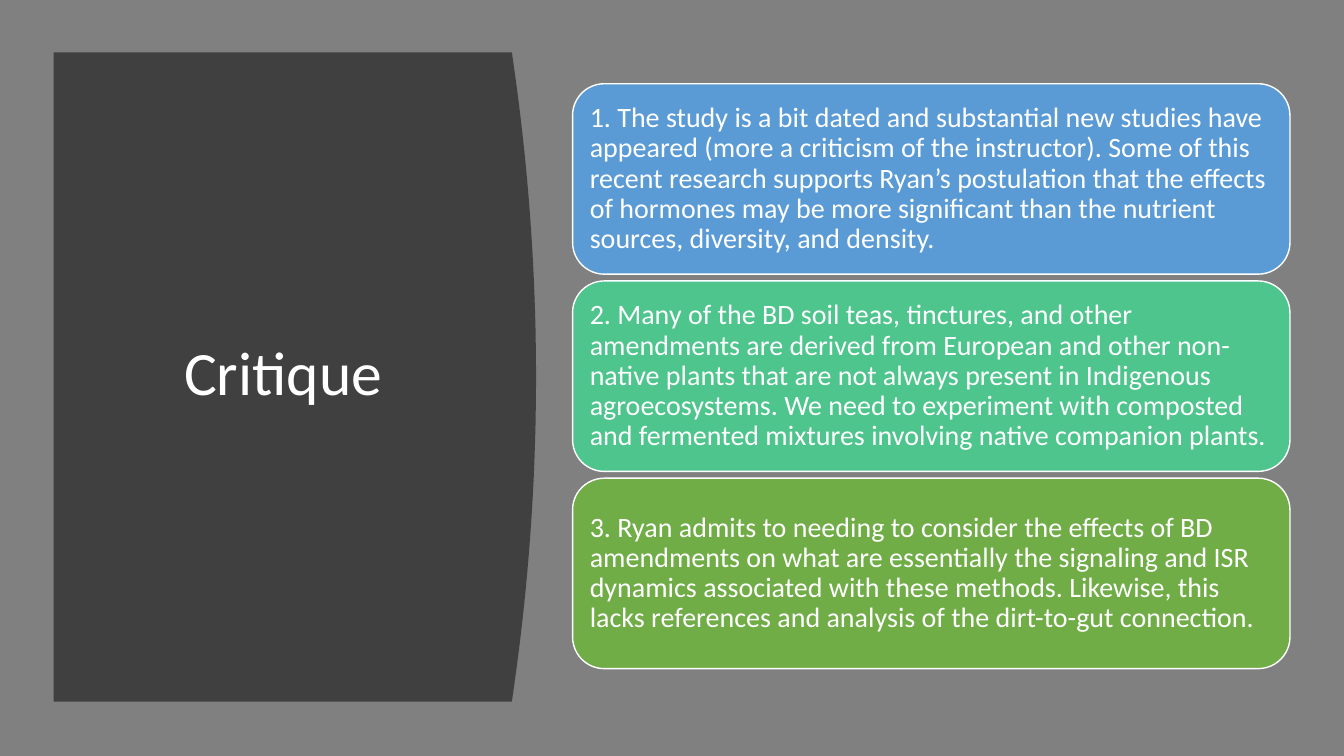
from pptx import Presentation
from pptx import util as u
from pptx.dml.color import RGBColor
from pptx.enum import shapes, text

CRITIQUES = [
    ("5B9BD5", "1. The study is a bit dated and substantial new studies have appeared "
     "(more a criticism of the instructor). Some of this recent research supports "
     "Ryan’s postulation that the effects of hormones may be more significant than "
     "the nutrient sources, diversity, and density."),
    ("4DC58D", "2. Many of the BD soil teas, tinctures, and other amendments are derived "
     "from European and other non-native plants that are not always present in "
     "Indigenous agroecosystems. We need to experiment with composted and fermented "
     "mixtures involving native companion plants."),
    ("70AD47", "3. Ryan admits to needing to consider the effects of BD amendments on what "
     "are essentially the signaling and ISR dynamics associated with these methods. "
     "Likewise, this lacks references and analysis of the dirt-to-gut connection."),
]


def paint(fill, color):
    """Make a fill solid in a hex colour."""
    fill.solid()
    fill.fore_color.rgb = RGBColor.from_string(color)


def write(frame, wording, size, align):
    """Put one white, vertically centred paragraph in a text frame."""
    frame.word_wrap = True
    frame.vertical_anchor = text.MSO_ANCHOR.MIDDLE
    paragraph = frame.paragraphs[0]
    paragraph.text = wording
    paragraph.alignment = align
    paragraph.line_spacing = 0.9
    paragraph.font.name = "Calibri"
    paragraph.font.size = u.Pt(size)
    paint(paragraph.font.fill, "FFFFFF")


def add_panel(slide, left, top, edge, height, bulge, steps=40):
    """Draw the dark panel whose right edge bows out as a parabola."""
    curve = []
    for step in range(steps + 1):
        t = step / steps
        curve.append((u.Cm(edge + 4 * bulge * t * (1 - t)), u.Cm(top + height * t)))
    builder = slide.shapes.build_freeform(u.Cm(left), u.Cm(top))
    builder.add_line_segments(curve + [(u.Cm(left), u.Cm(top + height))], close=True)
    panel = builder.convert_to_shape()
    panel.shadow.inherit = False
    paint(panel.fill, "404040")
    panel.line.fill.background()


def add_title(slide, wording, left, top, width, height):
    """Write the slide title over the panel."""
    title = slide.shapes.add_textbox(u.Cm(left), u.Cm(top), u.Cm(width), u.Cm(height))
    write(title.text_frame, wording, 44, text.PP_ALIGN.CENTER)


def add_card(slide, wording, color, left, top, width, height):
    """Draw one rounded card holding a point of critique."""
    card = slide.shapes.add_shape(shapes.MSO_SHAPE.ROUNDED_RECTANGLE,
                                  u.Cm(left), u.Cm(top), u.Cm(width), u.Cm(height))
    card.shadow.inherit = False
    paint(card.fill, color)
    paint(card.line.fill, "FFFFFF")
    card.line.width = u.Pt(1)
    frame = card.text_frame
    frame.margin_left = frame.margin_right = u.Cm(0.2)
    frame.margin_top = frame.margin_bottom = u.Cm(0.2)
    write(frame, wording, 20, text.PP_ALIGN.LEFT)


def main():
    """Build the critique slide and save it."""
    deck = Presentation()
    deck.slide_width, deck.slide_height = u.Cm(33.87), u.Cm(19.05)
    slide = deck.slides.add_slide(deck.slide_layouts[6])
    paint(slide.background.fill, "808080")
    add_panel(slide, left=1.35, top=1.32, edge=12.9, height=16.36, bulge=0.61)
    add_title(slide, "Critique", 2.39, 2.82, 9.5, 13.31)
    for row, (color, wording) in enumerate(CRITIQUES):
        add_card(slide, wording, color, 14.43, 2.11 + row * 4.97, 18.08, 4.8)
    deck.save("out.pptx")


if __name__ == "__main__":
    main()
